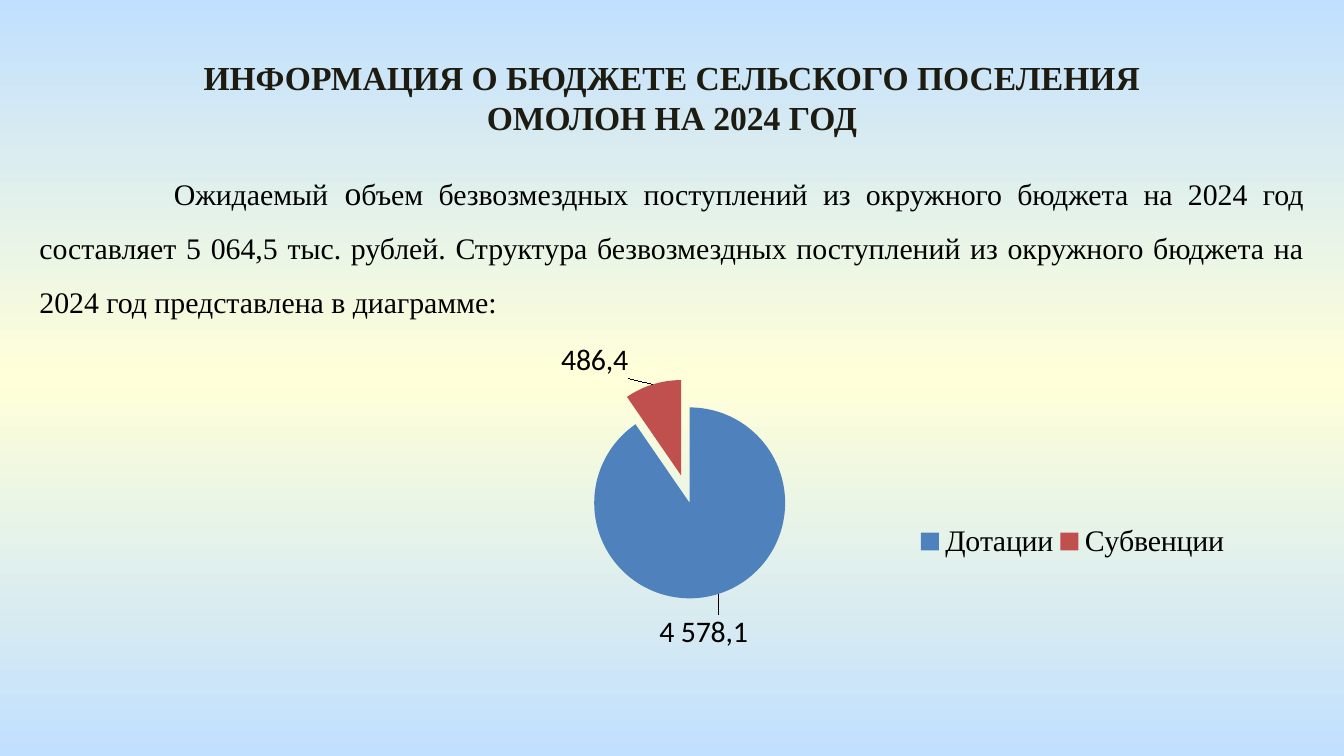
import copy

import lxml.etree
import pptx
import pptx.chart.data
import pptx.dml.color
import pptx.enum.chart
import pptx.enum.text
import pptx.oxml
import pptx.oxml.ns
import pptx.util

WIDTH = pptx.util.Inches(10)
HEIGHT = WIDTH * 9 // 16
SERIF, SANS = "Times New Roman", "Calibri"
COLORS = {
    "sky": "C1E0FF",
    "cream": "FFFFD9",
    "title": "1E1C11",
    "text": "000000",
    "grants": "4F81BD",
    "subventions": "C0504D",
}
# Boxes as shares of the slide: left, top, width, height
TITLE_BOX = (0.0625, 0.066, 0.875, 0.126)
BODY_BOX = (0.0195, 0.192, 0.961, 0.242)
CHART_BOX = (0.063, 0.432, 0.874, 0.552)


def rgb(name):
    return pptx.dml.color.RGBColor.from_string(COLORS[name])


def place(box):
    left, top, width, height = box
    return [int(share * side) for share, side in
            ((left, WIDTH), (top, HEIGHT), (width, WIDTH), (height, HEIGHT))]


def set_font(font, name, size, color="text", bold=False):
    font.name, font.size, font.bold = name, pptx.util.Pt(size), bold
    font.color.rgb = rgb(color)


def add_text(slide, box, paragraphs, alignment, line_spacing=None):
    """Each paragraph is a list of runs: text, font, size, color, bold."""
    frame = slide.shapes.add_textbox(*place(box)).text_frame
    frame.word_wrap = True
    for index, runs in enumerate(paragraphs):
        paragraph = frame.add_paragraph() if index else frame.paragraphs[0]
        paragraph.alignment = alignment
        paragraph.line_spacing = line_spacing
        # Tab stops one inch apart
        paragraph._p.get_or_add_pPr().set("defTabSz", str(pptx.util.Inches(1)))
        for text, *style in runs:
            run = paragraph.add_run()
            run.text = text
            set_font(run.font, *style)


def paint_background(slide):
    fill = slide.background.fill
    fill.gradient()
    fill.gradient_angle = 90
    first, last = fill.gradient_stops
    first.color.rgb = last.color.rgb = rgb("sky")
    first.position, last.position = 0, 1
    # Middle stop
    stops = slide.background._cSld.find(".//" + pptx.oxml.ns.qn("a:gsLst"))
    stops.insert(1, copy.deepcopy(stops[0]))
    middle = fill.gradient_stops[1]
    middle.position = 0.5
    middle.color.rgb = rgb("cream")


def add_title(slide, box):
    lines = ("ИНФОРМАЦИЯ О БЮДЖЕТЕ СЕЛЬСКОГО ПОСЕЛЕНИЯ", "ОМОЛОН НА 2024 ГОД")
    add_text(slide, box, [[(line, SERIF, 18, "title", True)] for line in lines],
             pptx.enum.text.PP_ALIGN.CENTER)


def add_body(slide, box):
    runs = [
        ("\t", SANS, 18),
        ("Ожидаемый", SERIF, 16),
        (" о", SERIF, 18),
        ("бъем безвозмездных поступлений из окружного бюджета на 2024 год "
         "составляет 5 064,5 тыс. рублей. Структура безвозмездных поступлений "
         "из окружного бюджета на 2024 год представлена в диаграмме:", SERIF, 16),
    ]
    add_text(slide, box, [runs], pptx.enum.text.PP_ALIGN.JUSTIFY, 1.5)


def chart_layout(target=None, **shares):
    """Manual layout of a chart part, in shares of the chart's size."""
    layout = pptx.oxml.parse_xml(
        "<c:layout %s><c:manualLayout/></c:layout>" % pptx.oxml.ns.nsdecls("c"))
    settings = {"layoutTarget": target} if target else {}
    if "w" in shares:
        settings.update(xMode="edge", yMode="edge")
    settings.update(shares)
    for tag, value in settings.items():
        lxml.etree.SubElement(
            layout[0], pptx.oxml.ns.qn("c:" + tag)).set("val", str(value))
    return layout


def set_layout(element, layout, index):
    for old in element.findall(pptx.oxml.ns.qn("c:layout")):
        element.remove(old)
    element.insert(index, layout)


def add_pie(slide, box):
    # Category, value, label, color, label shift
    parts = [
        ("Дотации", 4578.1, "4 578,1", "grants", (-0.052, 0.031)),
        ("Субвенции", 486.4, "486,4", "subventions", (-0.019, 0.004)),
    ]
    data = pptx.chart.data.CategoryChartData(number_format="#,##0.0")
    data.categories = [part[0] for part in parts]
    data.add_series("Series 1", [part[1] for part in parts])
    chart = slide.shapes.add_chart(
        pptx.enum.chart.XL_CHART_TYPE.PIE, *place(box), data).chart
    chart.has_title = False
    set_font(chart.font, SANS, 18)
    plot_area = chart._chartSpace.chart.plotArea
    set_layout(plot_area, chart_layout(
        "inner", x=0.418, y=0.126, w=0.187, h=0.528), 0)

    # Legend in one row
    chart.has_legend = True
    legend = chart.legend
    legend.position = pptx.enum.chart.XL_LEGEND_POSITION.RIGHT
    legend.include_in_layout = False
    set_font(legend.font, SERIF, 16)
    set_layout(legend._element, chart_layout(x=0.706, y=0.465, w=0.27, h=0.1), 1)

    # Slices pulled apart, with labels outside
    plot = chart.plots[0]
    plot.vary_by_categories = True
    series = plot.series[0]
    labels = series.data_labels
    labels.show_value = True
    labels.number_format, labels.number_format_is_linked = "#,##0.0", False
    set_font(labels.font, SANS, 16)
    for index, (_, _, text, color, (x, y)) in enumerate(parts):
        point = series.points[index]
        point.format.fill.solid()
        point.format.fill.fore_color.rgb = rgb(color)
        label = point.data_label
        run = label.text_frame.paragraphs[0].add_run()
        run.text = text
        set_font(run.font, SANS, 16)
        label.position = pptx.enum.chart.XL_LABEL_POSITION.OUTSIDE_END
        set_layout(label._get_or_add_dLbl(), chart_layout(x=x, y=y), 1)
    explosion = lxml.etree.Element(pptx.oxml.ns.qn("c:explosion"), val="15")
    series._element.find(pptx.oxml.ns.qn("c:dPt")).addprevious(explosion)


def main():
    presentation = pptx.Presentation()
    presentation.slide_width, presentation.slide_height = WIDTH, HEIGHT
    slide = presentation.slides.add_slide(presentation.slide_layouts[6])
    paint_background(slide)
    add_body(slide, BODY_BOX)
    add_pie(slide, CHART_BOX)
    add_title(slide, TITLE_BOX)
    presentation.save("out.pptx")


if __name__ == "__main__":
    main()
